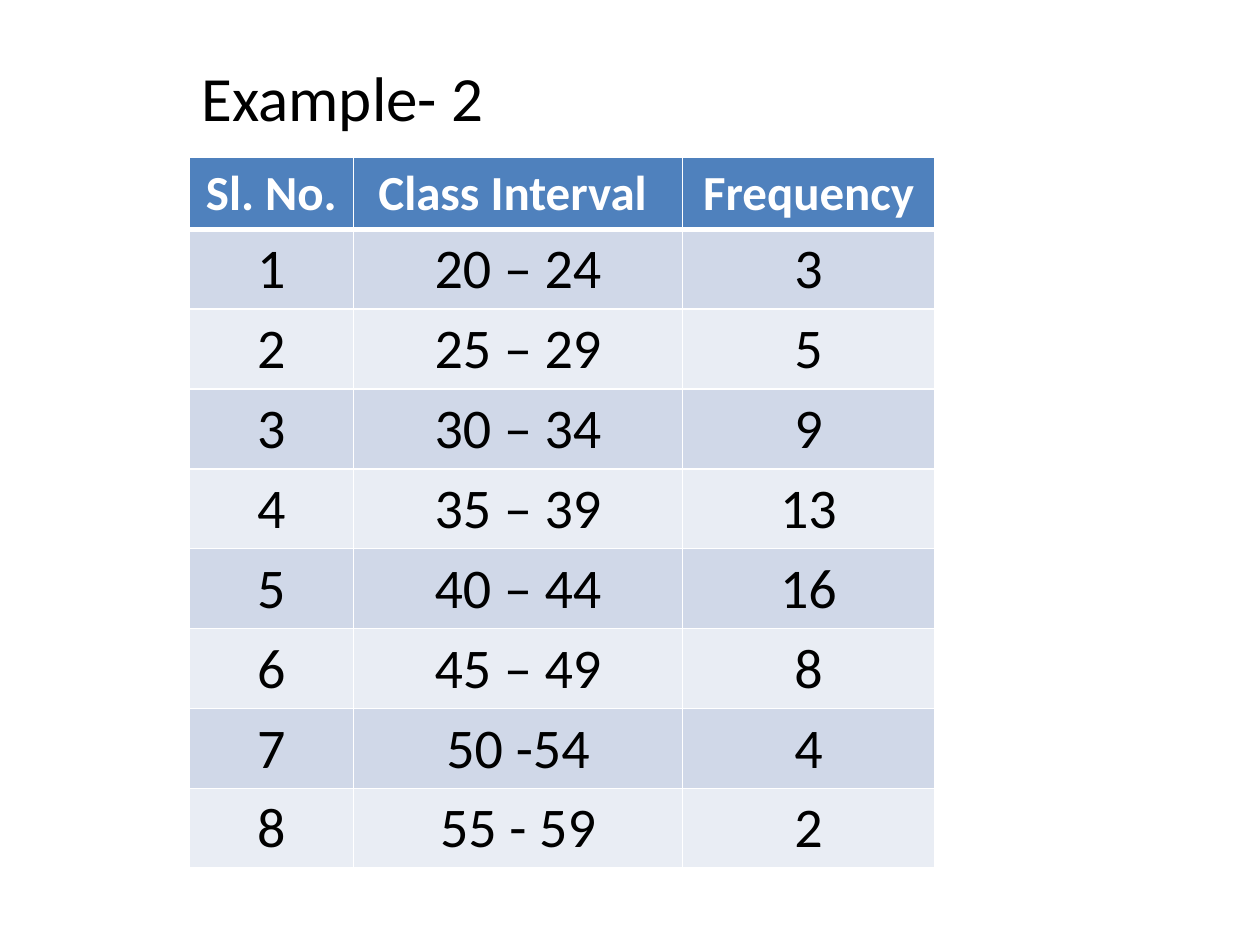
import lxml.etree
import pptx
import pptx.dml.color
import pptx.enum.text
import pptx.oxml.ns
import pptx.util

Cm = pptx.util.Cm
Pt = pptx.util.Pt
RGBColor = pptx.dml.color.RGBColor
ALIGN = pptx.enum.text.PP_ALIGN

BLACK = RGBColor(0x00, 0x00, 0x00)
WHITE = RGBColor(0xFF, 0xFF, 0xFF)
HEADER_BLUE = RGBColor(0x4F, 0x81, 0xBD)
BANDS = (RGBColor(0xE9, 0xED, 0xF4), RGBColor(0xD0, 0xD8, 0xE8))

HEADINGS = ("Sl. No.", "Class Interval ", "Frequency")
INTERVALS = ("20 – 24", "25 – 29", "30 – 34", "35 – 39",
             "40 – 44", "45 – 49", "50 -54", "55 - 59")
FREQUENCIES = (3, 5, 9, 13, 16, 8, 4, 2)


class SlideBuilder:
    font = "Calibri"

    def __init__(self, slide):
        self.slide = slide

    def add_text(self, frame, text, size, color, align, bold=False):
        paragraph = frame.paragraphs[0]
        paragraph.alignment = align
        run = paragraph.add_run()
        run.text = text
        run.font.name = self.font
        run.font.size = Pt(size)
        run.font.bold = bold
        run.font.color.rgb = color

    def title(self, text, left, top, width, height):
        heading = self.slide.shapes.title
        heading.left, heading.top = left, top
        heading.width, heading.height = width, height
        frame = heading.text_frame
        frame.word_wrap = False
        frame.auto_size = pptx.enum.text.MSO_AUTO_SIZE.SHAPE_TO_FIT_TEXT
        frame.vertical_anchor = pptx.enum.text.MSO_ANCHOR.TOP
        self.add_text(frame, text, 36, BLACK, ALIGN.LEFT)

    def border(self, cell, side, points):
        qn = pptx.oxml.ns.qn
        properties = cell._tc.get_or_add_tcPr()
        line = lxml.etree.SubElement(properties, qn("a:ln" + side), w=str(Pt(points)))
        fill = lxml.etree.SubElement(line, qn("a:solidFill"))
        lxml.etree.SubElement(fill, qn("a:srgbClr"), val=str(WHITE))

    def table(self, rows, left, top, widths, heights, drawn_height):
        frame = self.slide.shapes.add_table(
            len(rows), len(widths), left, top, sum(widths), sum(heights))
        table = frame.table
        for column, width in zip(table.columns, widths):
            column.width = width
        for row, height in zip(table.rows, heights):
            row.height = height
        frame.height = drawn_height
        for number, values in enumerate(rows):
            header = number == 0
            for column, value in enumerate(values):
                cell = table.cell(number, column)
                for side in "LRTB":
                    thick = (header and side == "B") or (number == 1 and side == "T")
                    self.border(cell, side, 3 if thick else 1)
                cell.fill.solid()
                cell.fill.fore_color.rgb = HEADER_BLUE if header else BANDS[number % 2]
                self.add_text(cell.text_frame, str(value), 28 if header else 32,
                              WHITE if header else BLACK, ALIGN.CENTER, header)


def main():
    presentation = pptx.Presentation()
    presentation.slide_width = Cm(25.4)
    presentation.slide_height = Cm(19.05)
    builder = SlideBuilder(presentation.slides.add_slide(presentation.slide_layouts[5]))
    classes = zip(range(1, len(INTERVALS) + 1), INTERVALS, FREQUENCIES)
    builder.table([HEADINGS, *classes], Cm(3.81), Cm(3.18),
                  [Cm(3.32), Cm(6.63), Cm(5.08)],
                  [Cm(1.27)] + [Cm(1.5)] * len(INTERVALS), Cm(14.3))
    builder.title("Example- 2", Cm(3.81), Cm(1.06), Cm(6.25), Cm(1.8))
    presentation.save("out.pptx")


if __name__ == "__main__":
    main()
